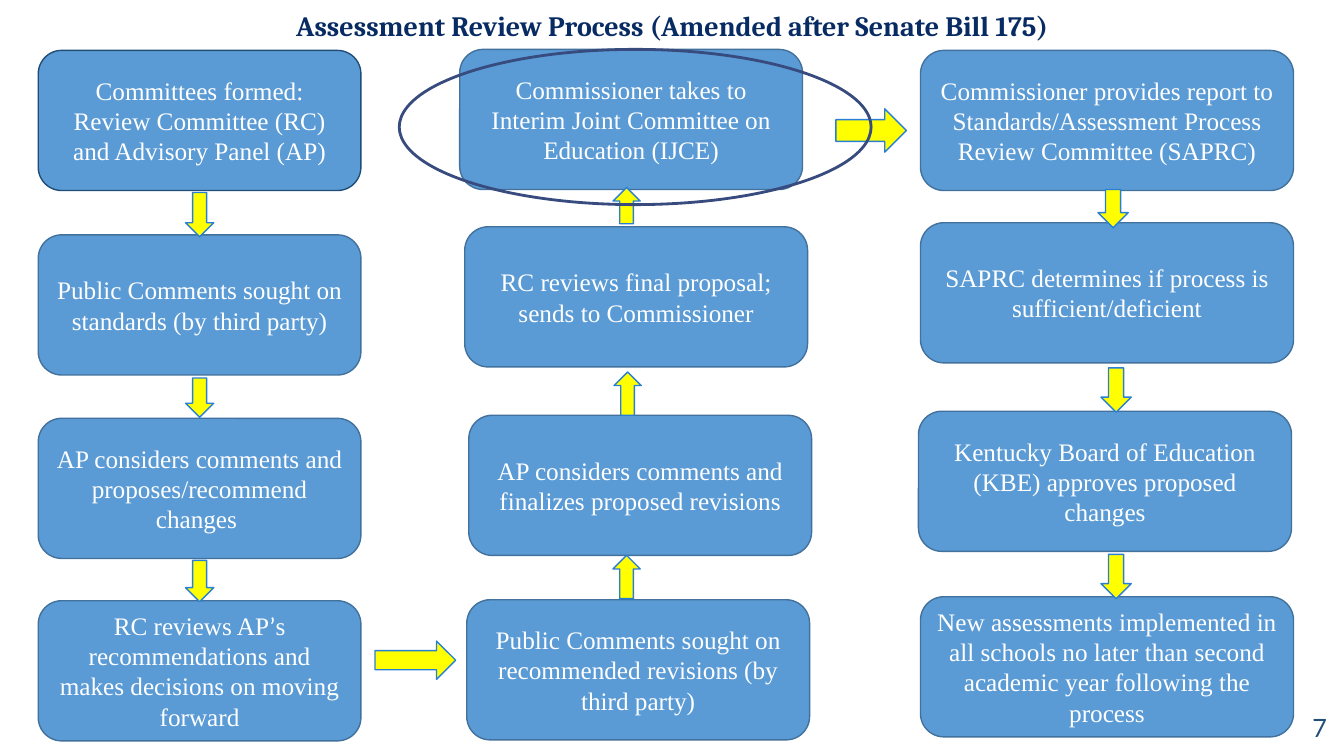
from pptx import Presentation
from pptx.dml.color import RGBColor
from pptx.enum.shapes import MSO_SHAPE
from pptx.enum.text import MSO_ANCHOR, PP_ALIGN
from pptx.util import Inches, Pt

ROUNDED = MSO_SHAPE.ROUNDED_RECTANGLE
OVAL = MSO_SHAPE.OVAL
DOWN, UP, RIGHT = MSO_SHAPE.DOWN_ARROW, MSO_SHAPE.UP_ARROW, MSO_SHAPE.RIGHT_ARROW
TOP, MIDDLE = MSO_ANCHOR.TOP, MSO_ANCHOR.MIDDLE
CENTER, ALIGN_RIGHT = PP_ALIGN.CENTER, PP_ALIGN.RIGHT

THEME = {
    "title": ("Cambria", 20, "072B62"),
    "step": ("Times New Roman", 18, "FFFFFF"),
    "apostrophe": ("Calibri", 18, "FFFFFF"),
    "number": ("Lato", 18, "234F77"),
    "box": "5B9BD5",
    "box_line": "41719C",
    "first_box_line": "1F4D78",
    "arrow": "FFFF00",
    "arrow_line": "297FD5",
    "highlight": "374B7F",
}


def add_outlined(kind, position, fill, line, width=1):
    shape = slide.shapes.add_shape(kind, *map(Inches, position))
    shape.shadow.inherit = False
    if fill:
        shape.fill.solid()
        shape.fill.fore_color.rgb = RGBColor.from_string(THEME[fill])
    else:
        shape.fill.background()
    shape.line.color.rgb = RGBColor.from_string(THEME[line])
    shape.line.width = Pt(width)
    return shape


def write(shape, runs, align, anchor, bold=False):
    frame = shape.text_frame
    frame.word_wrap = True
    frame.vertical_anchor = anchor
    paragraph = frame.paragraphs[0]
    paragraph.alignment = align
    for text, style in runs:
        name, size, color = THEME[style]
        run = paragraph.add_run()
        run.text = text
        run.font.name = name
        run.font.size = Pt(size)
        run.font.bold = bold
        run.font.color.rgb = RGBColor.from_string(color)


presentation = Presentation()
presentation.slide_width = Inches(13.33)
presentation.slide_height = Inches(7.5)
slide = presentation.slides.add_slide(presentation.slide_layouts[5])

title = slide.shapes.title
title.left, title.top, title.width, title.height = map(Inches, (0.01, -0.02, 13.32, 0.66))
frame = title.text_frame
frame.margin_left = frame.margin_right = frame.margin_top = frame.margin_bottom = Inches(0.1)
write(title, [("Assessment Review Process (Amended after Senate Bill 175)", "title")], CENTER, TOP, True)

page_number = slide.shapes.add_textbox(*map(Inches, (12.51, 7.02, 0.75, 0.4)))
write(page_number, [("7", "number")], ALIGN_RIGHT, MIDDLE)

BOX_HEIGHT = 1.39
columns = [
    (3.2, [
        (0.38, 0.5, ["Committees formed: Review Committee (RC) and Advisory Panel (AP)"]),
        (0.38, 2.33, ["Public Comments sought on standards (by third party)"]),
        (0.38, 4.15, ["AP considers comments and proposes/recommend changes "]),
        (0.38, 5.96, ["RC reviews AP", "’", "s recommendations and makes decisions on moving forward"]),
    ]),
    (3.4, [
        (4.56, 0.49, ["Commissioner takes to Interim Joint Committee on Education (IJCE)"]),
        (4.61, 2.25, ["RC reviews final proposal; sends to Commissioner"]),
        (4.65, 4.12, ["AP considers comments and finalizes proposed revisions"]),
        (4.63, 5.95, ["Public Comments sought on recommended revisions (by third party)"]),
    ]),
    (3.7, [
        (9.13, 0.5, ["Commissioner provides report to Standards/Assessment Process Review Committee (SAPRC)"]),
        (9.13, 2.21, ["SAPRC determines if process is sufficient/deficient"]),
        (9.11, 4.08, ["Kentucky Board of Education (KBE) approves proposed changes"]),
        (9.13, 5.92, ["New assessments implemented in all schools no later than second academic year following the process"]),
    ]),
]
line = "first_box_line"
for width, steps in columns:
    for left, top, texts in steps:
        box = add_outlined(ROUNDED, (left, top, width, BOX_HEIGHT), "box", line)
        runs = [(text, "apostrophe" if text == "’" else "step") for text in texts]
        write(box, runs, CENTER, MIDDLE)
        line = "box_line"

arrows = [
    (DOWN, 0.28, [(1.84, 1.91, 0.44), (1.84, 3.75, 0.39), (1.84, 5.56, 0.41)]),
    (UP, 0.27, [(6.08, 1.86, 0.36), (6.09, 3.69, 0.43), (6.08, 5.51, 0.43)]),
    (DOWN, 0.3, [(10.89, 1.88, 0.38), (10.92, 3.65, 0.44), (10.92, 5.5, 0.44)]),
    (RIGHT, 0.8, [(3.72, 6.36, 0.38)]),
    (RIGHT, 0.7, [(8.29, 1.08, 0.43)]),
]
for direction, width, places in arrows:
    for left, top, height in places:
        add_outlined(direction, (left, top, width, height), "arrow", "arrow_line")

add_outlined(OVAL, (3.96, 0.49, 4.68, 1.54), None, "highlight", 2)

presentation.save("out.pptx")
